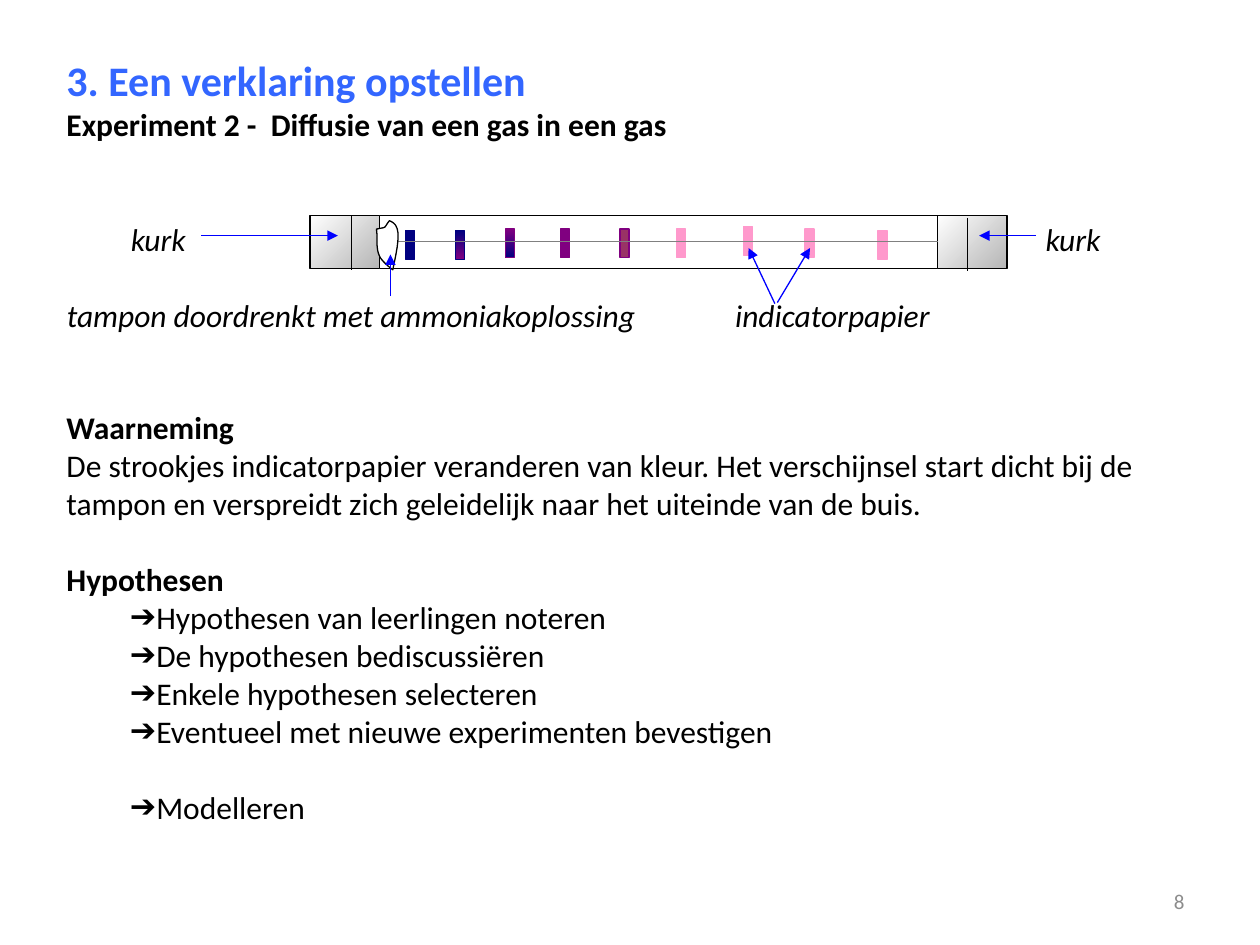
from lxml.etree import SubElement
from pptx import Presentation
from pptx.dml.color import RGBColor
from pptx.enum.shapes import MSO_CONNECTOR as CONN, MSO_SHAPE as SHAPE
from pptx.enum.text import MSO_ANCHOR as ANCHOR, PP_ALIGN as ALIGN
from pptx.oxml.ns import qn
from pptx.util import Cm, Pt

FONT = "Calibri"
BLUE, BLACK, GREY = "0000FF", "000000", "808080"
NAVY, PURPLE, PLUM, PINK = "000080", "800080", "993366", "FF99CC"

# text, size, bold, colour, arrow bullet, space before (pt)
BODY = [
    ("3. Een verklaring opstellen", 24, True, "3366FF", False, 0),
    ("Experiment 2 -  Diffusie van een gas in een gas", 18, True, BLACK, False, 0),
    ("Waarneming", 18, True, BLACK, False, 152),
    ("De strookjes indicatorpapier veranderen van kleur. Het verschijnsel start dicht bij de "
     "tampon en verspreidt zich geleidelijk naar het uiteinde van de buis.",
     18, False, BLACK, False, 0),
    ("Hypothesen", 18, True, BLACK, False, 22),
    ("Hypothesen van leerlingen noteren", 18, False, BLACK, True, 0),
    ("De hypothesen bediscussiëren", 18, False, BLACK, True, 0),
    ("Enkele hypothesen selecteren", 18, False, BLACK, True, 0),
    ("Eventueel met nieuwe experimenten bevestigen", 18, False, BLACK, True, 0),
    ("Modelleren", 18, False, BLACK, True, 22),
]
# text, left, top, width (cm)
LABELS = [
    ("kurk", 2.64, 4.43, 1.4),
    ("kurk", 21.08, 4.43, 1.4),
    ("tampon doordrenkt met ammoniakoplossing", 1.35, 5.96, 12),
    ("indicatorpapier", 14.82, 5.96, 4.4),
]
# left, top (cm), fill (a pair is a gradient), outline
STRIPS = [
    (8.18, 4.65, NAVY, NAVY),
    (9.19, 4.65, (NAVY, PURPLE), NAVY),
    (10.19, 4.62, (PURPLE, NAVY), PURPLE),
    (11.3, 4.62, PURPLE, PURPLE),
    (12.5, 4.62, PLUM, PURPLE),
    (13.64, 4.62, PINK, PINK),
    (14.99, 4.57, PINK, PINK),
    (16.23, 4.62, PINK, PINK),
    (17.7, 4.65, PINK, PINK),
]
STRIP_W, STRIP_H = 0.18, 0.58
TUBE_TOP, TUBE_H, CORK_W = 4.34, 1.07, 1.4
CORK_LEFTS = (6.25, 18.9)
CORK_EDGES = [(7.09, 4.34, 7.09, 5.44), (19.51, 4.39, 19.51, 5.46)]
ARROWS = [
    (15.62, 6.12, 15.09, 5),
    (15.67, 6.1, 16.33, 5),
    (7.87, 5.97, 7.87, 5.13),
    (20.88, 4.75, 19.74, 4.75),
    (4.06, 4.75, 6.81, 4.75),
]
# Bezier outline: start, then two control points and an end per curve (cm)
TAMPON_START = (7.59, 4.62)
TAMPON_CURVES = [
    ((7.62, 4.8), (7.57, 4.98), (7.65, 5.16)),
    ((7.7, 5.28), (7.92, 5.44), (7.92, 5.44)),
    ((7.95, 5.26), (8.1, 4.72), (7.98, 4.55)),
    ((7.95, 4.5), (7.9, 4.47), (7.85, 4.45)),
    ((7.72, 4.62), (7.82, 4.57), TAMPON_START),
]


def rgb(color):
    return RGBColor.from_string(color)


def style(sp, fill, line, angle=270):
    """Fill with a colour, a gradient pair or nothing, and outline the shape."""
    sp.shadow.inherit = False
    if fill is None:
        sp.fill.background()
    elif isinstance(fill, tuple):
        sp.fill.gradient()
        sp.fill.gradient_angle = angle
        for stop, color in zip(sp.fill.gradient_stops, fill):
            stop.color.rgb = rgb(color)
    else:
        sp.fill.solid()
        sp.fill.fore_color.rgb = rgb(fill)
    sp.line.color.rgb = rgb(line)
    sp.line.width = Pt(0.75)


def add_rect(s, x, y, w, h, fill, line, angle=270):
    sp = s.shapes.add_shape(SHAPE.RECTANGLE, Cm(x), Cm(y), Cm(w), Cm(h))
    style(sp, fill, line, angle)
    return sp


def add_line(s, ends, color, arrow=False):
    cn = s.shapes.add_connector(CONN.STRAIGHT, *map(Cm, ends))
    cn.line.color.rgb = rgb(color)
    cn.line.width = Pt(0.75)
    if arrow:
        SubElement(cn.line._get_or_add_ln(), qn("a:tailEnd"), type="triangle")
    SubElement(cn._element.spPr, qn("a:effectLst"))
    return cn


def add_box(s, x, y, w, h, inset=True):
    tf = s.shapes.add_textbox(Cm(x), Cm(y), Cm(w), Cm(h)).text_frame
    tf.word_wrap = True
    if not inset:
        tf.margin_left = tf.margin_right = tf.margin_top = tf.margin_bottom = 0
    return tf


def format_text(p, size, color=BLACK, bold=False, italic=False):
    for r in p.runs:
        r.font.name, r.font.size = FONT, Pt(size)
        r.font.bold, r.font.italic = bold, italic
        r.font.color.rgb = rgb(color)


def add_bullet(p):
    pPr = p._p.get_or_add_pPr()
    pPr.set("marL", str(Cm(1.8)))
    pPr.set("indent", str(-Cm(0.52)))
    SubElement(pPr, qn("a:buFont"), typeface="Arial")
    SubElement(pPr, qn("a:buChar"), char="➔")


def bezier(start, c1, c2, end, steps=10):
    for i in range(1, steps + 1):
        t = i / steps
        u = 1 - t
        yield tuple(Cm(u**3 * a + 3 * u * u * t * b + 3 * u * t * t * c + t**3 * d)
                    for a, b, c, d in zip(start, c1, c2, end))


def add_tampon(s):
    points, pos = [], TAMPON_START
    for curve in TAMPON_CURVES:
        points += bezier(pos, *curve)
        pos = curve[-1]
    builder = s.shapes.build_freeform(*map(Cm, TAMPON_START))
    builder.add_line_segments(points, close=True)
    style(builder.convert_to_shape(), "FFFFFF", BLACK)


def add_texts(s):
    tf = add_box(s, 1.09, 0.97, 22.89, 15.9)
    for i, (text, size, bold, color, bullet, before) in enumerate(BODY):
        p = tf.add_paragraph() if i else tf.paragraphs[0]
        p.text = text
        p.space_before = Pt(before)
        format_text(p, size, color, bold)
        if bullet:
            add_bullet(p)
    for text, x, y, w in LABELS:
        p = add_box(s, x, y, w, 0.78, inset=False).paragraphs[0]
        p.text = text
        format_text(p, 18, italic=True)
    tf = add_box(s, 18.21, 17.65, 5.92, 1.02)
    tf.vertical_anchor = ANCHOR.MIDDLE
    p = tf.paragraphs[0]
    p.text = "8"
    p.alignment = ALIGN.RIGHT
    format_text(p, 12, "8C8C8C")


def add_tube(s):
    for x, y, fill, line in STRIPS:
        add_rect(s, x, y, STRIP_W, STRIP_H, fill, line)
    add_rect(s, 7.24, TUBE_TOP, 12.09, TUBE_H, None, BLACK)
    left, right = [add_rect(s, x, TUBE_TOP, CORK_W, TUBE_H, ("FFFFFF", "B6B6B6"), BLACK, 315)
                   for x in CORK_LEFTS]
    mid = TUBE_TOP + TUBE_H / 2
    axis = add_line(s, (CORK_LEFTS[0] + CORK_W, mid, CORK_LEFTS[1], mid), GREY)
    axis.begin_connect(left, 3)
    axis.end_connect(right, 1)
    add_tampon(s)
    for ends in CORK_EDGES:
        add_line(s, ends, BLACK)
    for ends in ARROWS:
        add_line(s, ends, BLUE, arrow=True)


def main():
    prs = Presentation()
    prs.slide_width, prs.slide_height = Cm(25.4), Cm(19.05)
    s = prs.slides.add_slide(prs.slide_layouts[6])
    add_texts(s)
    add_tube(s)
    prs.save("out.pptx")


if __name__ == "__main__":
    main()
